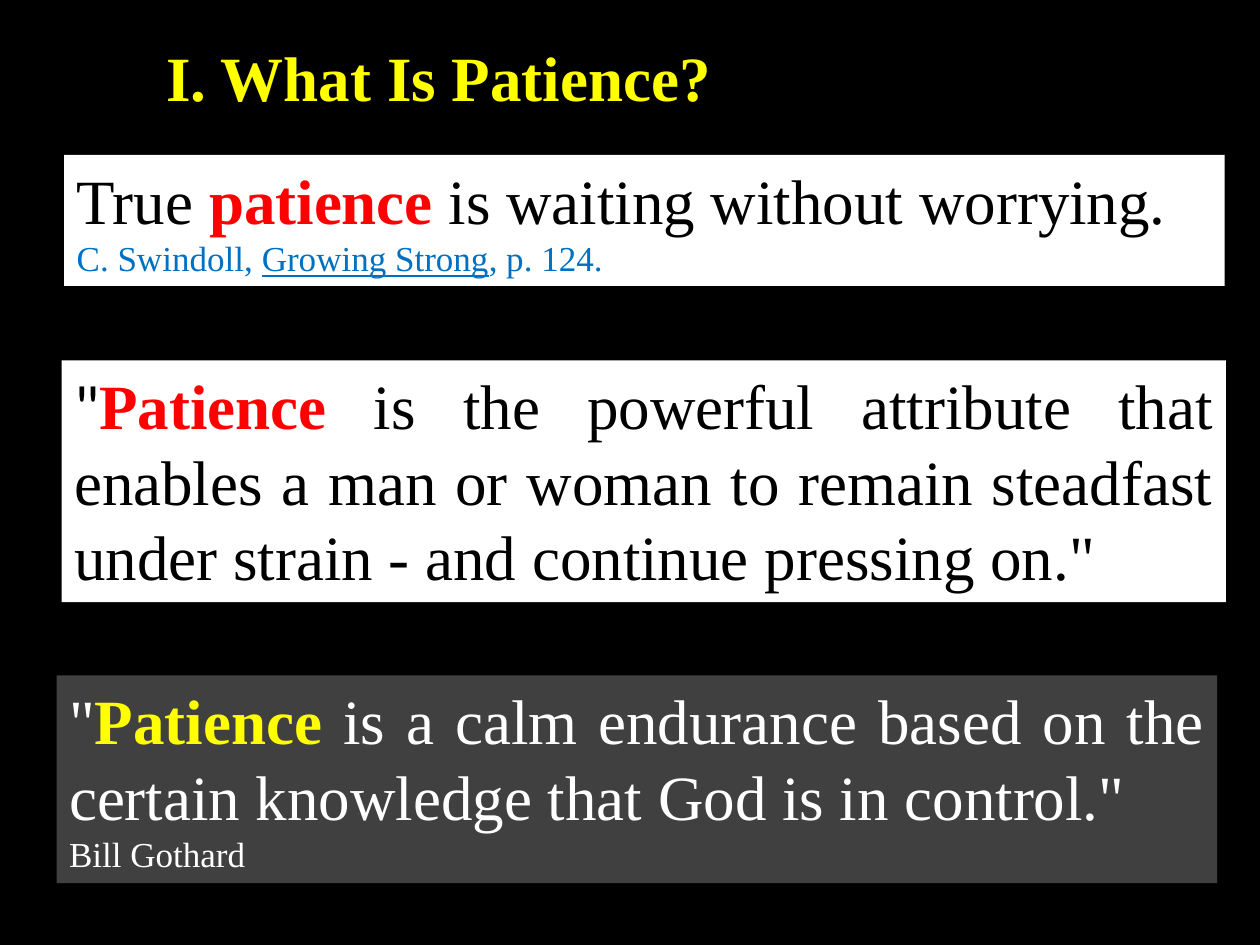
from pptx import Presentation
from pptx.dml.color import RGBColor
from pptx.enum.text import MSO_ANCHOR, PP_ALIGN
from pptx.util import Inches, Pt

LEFT = PP_ALIGN.LEFT
JUSTIFY = PP_ALIGN.JUSTIFY
TOP = MSO_ANCHOR.TOP

BLACK = RGBColor(0x00, 0x00, 0x00)
WHITE = RGBColor(0xFF, 0xFF, 0xFF)
RED = RGBColor(0xFF, 0x00, 0x00)
YELLOW = RGBColor(0xFF, 0xFF, 0x00)
BLUE = RGBColor(0x00, 0x70, 0xC0)
GRAY = RGBColor(0x40, 0x40, 0x40)

SERIF = "Times New Roman"

TITLE = {
    "area": (1.22, 0.26, 4.57, 0.71),
    "wrap": False,
    "paragraphs": [[("I. What Is Patience?", {"color": YELLOW, "bold": True})]],
}
QUOTES = [
    {
        "area": (0.51, 1.23, 9.21, 1.04),
        "fill": WHITE,
        "paragraphs": [
            [
                ("True ", {}),
                ("patience", {"color": RED, "bold": True}),
                (" is waiting without worrying.", {}),
            ],
            [
                ("C. Swindoll, ", {"size": 20, "color": BLUE}),
                ("Growing Strong", {"size": 20, "color": BLUE, "underline": True}),
                (", p. 124.", {"size": 20, "color": BLUE}),
            ],
        ],
    },
    {
        "area": (0.49, 2.86, 9.24, 1.92),
        "fill": WHITE,
        "align": JUSTIFY,
        "paragraphs": [
            [
                ('"', {"name": "Calibri"}),
                ("Patience", {"color": RED, "bold": True}),
                (" is the powerful attribute that enables a man or woman to remain "
                 'steadfast under strain - and continue pressing on."', {}),
            ],
        ],
    },
    {
        "area": (0.45, 5.36, 9.21, 1.65),
        "fill": GRAY,
        "align": JUSTIFY,
        "paragraphs": [
            [
                ('"', {"color": WHITE}),
                ("Patience", {"color": YELLOW, "bold": True}),
                (" is a calm endurance based on the certain knowledge "
                 'that God is in control."', {"color": WHITE}),
            ],
            [("Bill Gothard", {"size": 20, "color": WHITE})],
        ],
    },
]


def add_span(para, text, name=SERIF, size=36, color=BLACK, bold=False, underline=False):
    span = para.add_run()
    span.text = text
    span.font.name = name
    span.font.size = Pt(size)
    span.font.color.rgb = color
    span.font.bold = bold
    span.font.underline = underline


def add_text_box(page, area, paragraphs, fill=None, align=LEFT, wrap=True):
    box = page.shapes.add_textbox(*(Inches(length) for length in area))
    if fill is not None:
        box.fill.solid()
        box.fill.fore_color.rgb = fill
    frame = box.text_frame
    frame.word_wrap = wrap
    frame.vertical_anchor = TOP
    for index, spans in enumerate(paragraphs):
        para = frame.add_paragraph() if index else frame.paragraphs[0]
        para.alignment = align
        for text, style in spans:
            add_span(para, text, **style)


def main():
    deck = Presentation()
    deck.slide_width = Inches(10)
    deck.slide_height = Inches(7.5)
    page = deck.slides.add_slide(deck.slide_layouts[6])
    page.background.fill.solid()
    page.background.fill.fore_color.rgb = BLACK
    for content in [TITLE, *QUOTES]:
        add_text_box(page, **content)
    deck.save("out.pptx")


if __name__ == "__main__":
    main()
